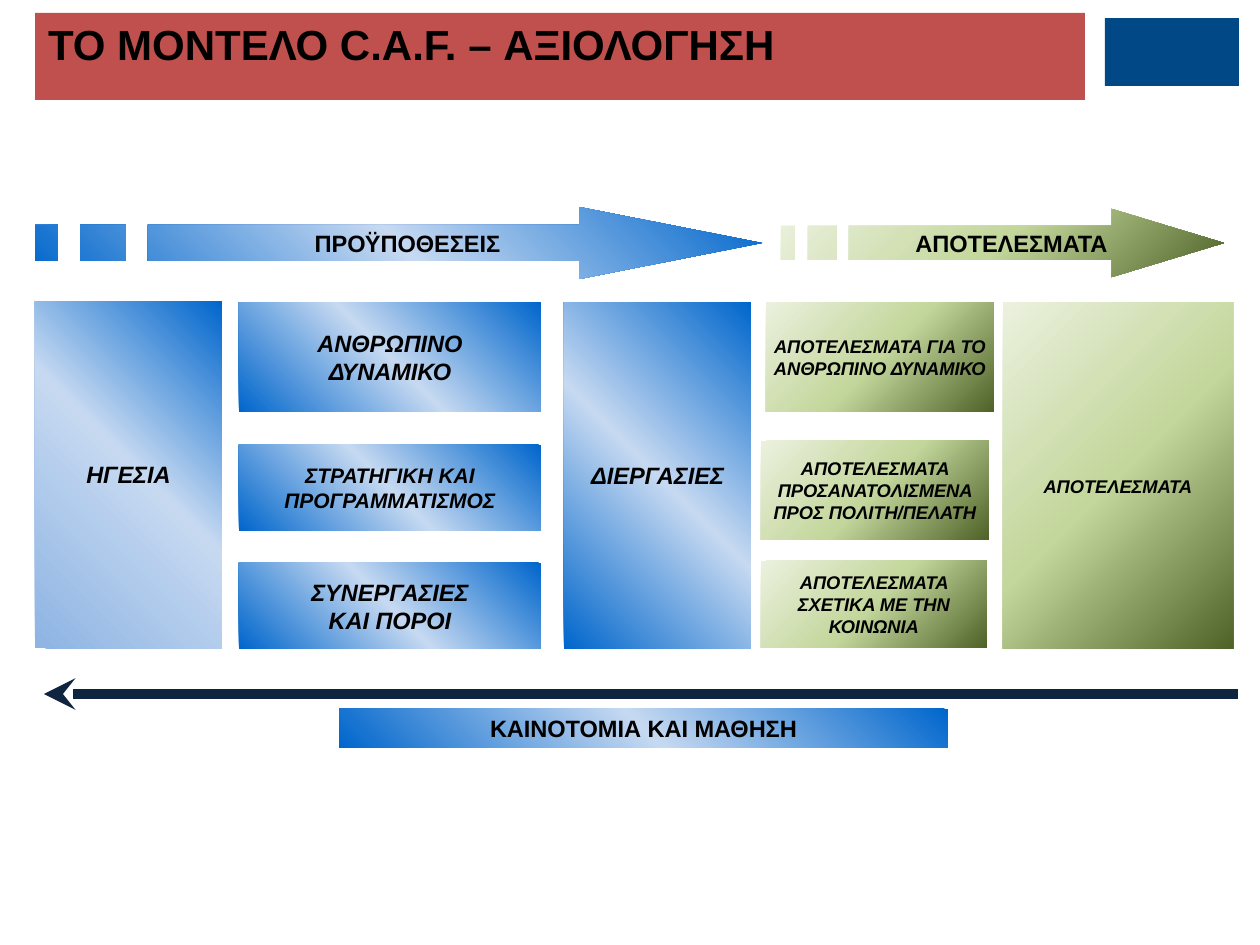
from pptx import Presentation
from pptx.dml.color import RGBColor
from pptx.enum.shapes import MSO_CONNECTOR, MSO_SHAPE
from pptx.enum.text import MSO_ANCHOR, PP_ALIGN
from pptx.oxml import parse_xml
from pptx.oxml.ns import nsdecls
from pptx.util import Pt

PX = 914400 / 126
RECT, PROCESS = MSO_SHAPE.RECTANGLE, MSO_SHAPE.FLOWCHART_PROCESS
CENTER, LEFT = PP_ALIGN.CENTER, PP_ALIGN.LEFT
MIDDLE, TOP = MSO_ANCHOR.MIDDLE, MSO_ANCHOR.TOP

# Gradient: angle in degrees, then (position in percent, colour)
BLUE = (315, (0, "0066CC"), (50, "C6D9F1"), (100, "0066CC"))
PALE_BLUE = (315, (0, "8EB4E3"), (53, "C6D9F1"), (100, "0066CC"))
GREEN = (45, (0, "EBF1DE"), (50, "C3D69B"), (100, "4F6228"))


def paint(shape, fill):
    """Fill with a hex colour or a gradient, without outline or shadow."""
    if isinstance(fill, str):
        shape.fill.solid()
        shape.fill.fore_color.rgb = RGBColor.from_string(fill)
    else:
        angle, *stops = fill
        marks = "".join(
            f'<a:gs pos="{pos * 1000}"><a:srgbClr val="{color}"/></a:gs>'
            for pos, color in stops)
        shape._element.spPr.insert(2, parse_xml(
            f'<a:gradFill {nsdecls("a")} rotWithShape="1"><a:gsLst>{marks}</a:gsLst>'
            f'<a:lin ang="{angle * 60000}" scaled="0"/></a:gradFill>'))
    shape.line.fill.background()
    shape.shadow.inherit = False


def write(shape, text, size=13.5, italic=False, align=CENTER, anchor=MIDDLE,
          insets=(8, 4, 8, 4)):
    frame = shape.text_frame
    frame.word_wrap = True
    frame.vertical_anchor = anchor
    (frame.margin_left, frame.margin_top, frame.margin_right,
     frame.margin_bottom) = [round(inset * PX) for inset in insets]
    frame.text = text
    for paragraph in frame.paragraphs:
        paragraph.alignment = align
        font = paragraph.runs[0].font
        font.name, font.size = "Arial", Pt(size)
        font.bold, font.italic = True, italic
        font.color.rgb = RGBColor.from_string("000000")


prs = Presentation()
prs.slide_width, prs.slide_height = round(1260 * PX), round(945 * PX)
slide = prs.slides.add_slide(prs.slide_layouts[6])
shapes = slide.shapes

# Title band, with a plain block in the corner beside it
corner = shapes.add_shape(RECT, *[round(v * PX) for v in (1105, 18, 134, 68)])
paint(corner, "004986")
title = shapes.add_shape(RECT, *[round(v * PX) for v in (35, 13, 1050, 87)])
paint(title, "C0504D")
write(title, "ΤΟ ΜΟΝΤΕΛΟ C.A.F. – ΑΞΙΟΛΟΓΗΣΗ", size=24, align=LEFT,
      anchor=TOP, insets=(13, 6, 13, 6))

# Criteria: text, size, box, gradient, top inset
criteria = [
    ("ΑΠΟΤΕΛΕΣΜΑΤΑ", 10.5, (1003, 302, 230, 347), GREEN, 26),
    ("ΑΠΟΤΕΛΕΣΜΑΤΑ ΓΙΑ ΤΟ ΑΝΘΡΩΠΙΝΟ ΔΥΝΑΜΙΚΟ", 10.5, (766, 302, 228, 110), GREEN, 4),
    ("ΑΠΟΤΕΛΕΣΜΑΤΑ ΠΡΟΣΑΝΑΤΟΛΙΣΜΕΝΑ ΠΡΟΣ ΠΟΛΙΤΗ/ΠΕΛΑΤΗ", 10.5,
     (761, 441, 228, 99), GREEN, 4),
    ("ΑΠΟΤΕΛΕΣΜΑΤΑ ΣΧΕΤΙΚΑ ΜΕ ΤΗΝ ΚΟΙΝΩΝΙΑ", 10.5, (761, 561, 226, 87), GREEN, 4),
    ("ΑΝΘΡΩΠΙΝΟ\nΔΥΝΑΜΙΚΟ", 13.5, (239, 302, 302, 110), BLUE, 4),
    ("ΔΙΕΡΓΑΣΙΕΣ", 13.5, (564, 302, 187, 347), BLUE, 4),
    ("ΣΤΡΑΤΗΓΙΚΗ ΚΑΙ ΠΡΟΓΡΑΜΜΑΤΙΣΜΟΣ", 12, (239, 445, 302, 86), BLUE, 4),
    ("ΣΥΝΕΡΓΑΣΙΕΣ\nΚΑΙ ΠΟΡΟΙ", 13.5, (239, 563, 302, 86), BLUE, 4),
    ("ΗΓΕΣΙΑ", 13.5, (35, 301, 187, 347), PALE_BLUE, 4),
]
for text, size, box, gradient, top_inset in criteria:
    criterion = shapes.add_shape(PROCESS, *[round(v * PX) for v in box])
    paint(criterion, gradient)
    write(criterion, text, size=size, italic=True, insets=(8, top_inset, 8, 4))

# Striped arrows: text, x of stripes, shaft, head and tip, middle y, half heights
arrows = [
    ("ΠΡΟΫΠΟΘΕΣΕΙΣ", ((35, 58), (80, 126)), 148, 579, 762, 243, 18, 36, BLUE),
    ("ΑΠΟΤΕΛΕΣΜΑΤΑ", ((781, 795), (808, 837)), 849, 1112, 1224, 243, 17, 34, GREEN),
]
for text, stripes, shaft, head, tip, mid, half, half_head, gradient in arrows:
    top, bottom = mid - half, mid + half
    outline = shapes.build_freeform(head, mid - half_head, scale=PX)
    outline.add_line_segments([(head, top), (shaft, top), (shaft, bottom), (head, bottom),
                               (head, mid + half_head), (tip, mid)])
    for left, right in stripes:
        outline.move_to(left, top)
        outline.add_line_segments([(left, bottom), (right, bottom), (right, top)])
    arrow = outline.convert_to_shape()
    paint(arrow, gradient)
    write(arrow, text, insets=(26, 4, 8, 4))

# Feedback line and its label
feedback = shapes.add_connector(MSO_CONNECTOR.STRAIGHT,
                                *[round(v * PX) for v in (1238, 694, 44, 694)])
feedback.line.width = Pt(6)
feedback.line.color.rgb = RGBColor.from_string("0F243E")
feedback.line._get_or_add_ln().append(
    parse_xml(f'<a:tailEnd {nsdecls("a")} type="stealth"/>'))
feedback._element.spPr.append(parse_xml(f'<a:effectLst {nsdecls("a")}/>'))

learning = shapes.add_shape(RECT, *[round(v * PX) for v in (339, 709, 609, 39)])
paint(learning, BLUE)
write(learning, "ΚΑΙΝΟΤΟΜΙΑ ΚΑΙ ΜΑΘΗΣΗ")

prs.save("out.pptx")
